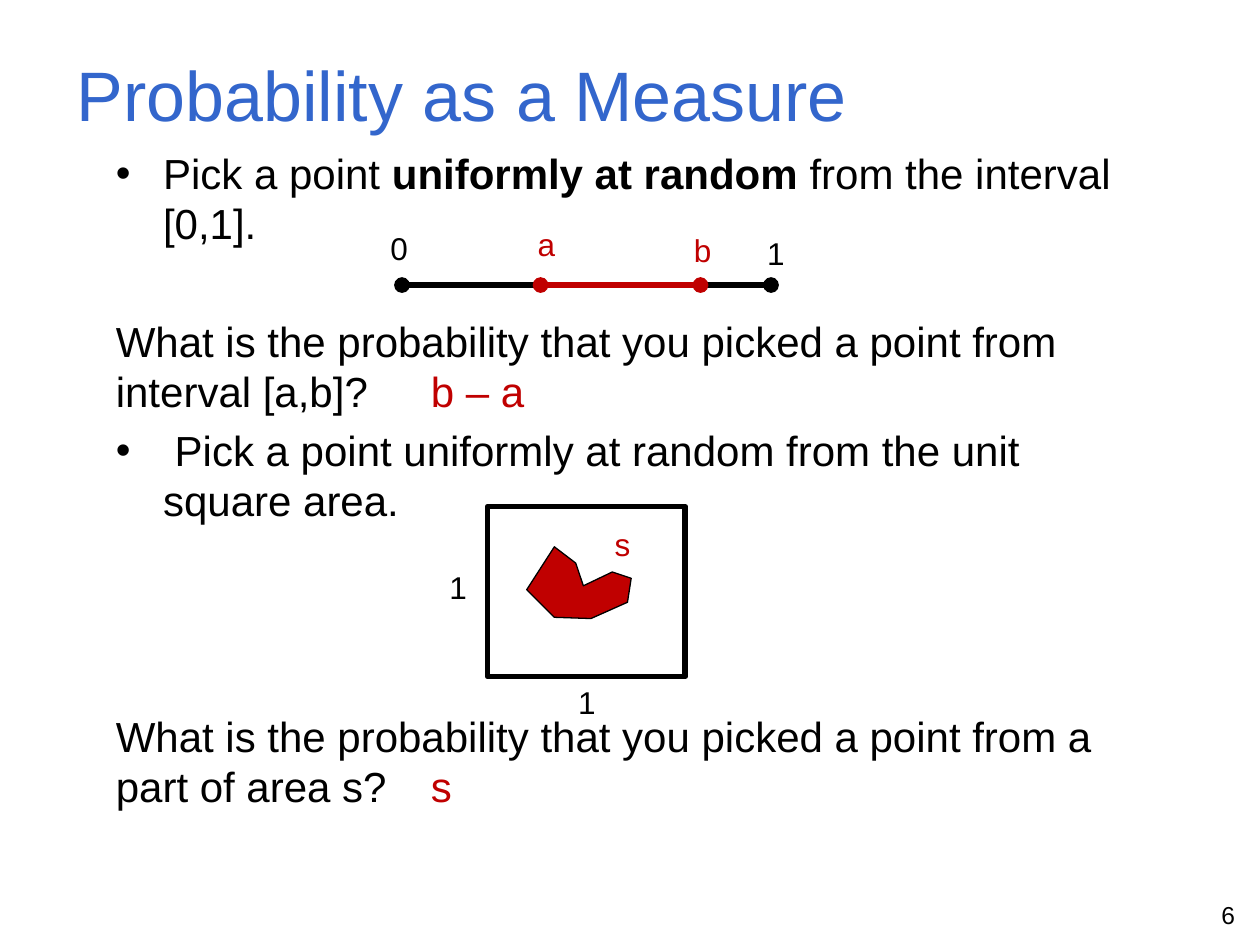
from dataclasses import dataclass
from typing import NamedTuple

from lxml import etree
from pptx import Presentation
from pptx import util as u
from pptx.dml.color import RGBColor
from pptx.enum import shapes, text
from pptx.oxml import ns

Pt = u.Pt


@dataclass(frozen=True)
class Theme:
    font: str = "Arial"
    title_color: str = "3366CC"
    ink: str = "000000"
    accent: str = "C00000"
    paper: str = "FFFFFF"
    title_size: float = 40
    body_size: float = 24
    label_size: float = 18
    number_size: float = 14
    line_height: float = 28.8
    bullet_indent: float = 27


THEME = Theme()


class Frame(NamedTuple):
    left: float
    top: float
    width: float
    height: float


class Span(NamedTuple):
    words: str
    color: str = THEME.ink
    bold: bool = False


class Item(NamedTuple):
    spans: tuple
    gap: float = 4.8
    bullet: bool = False
    answer_stop: float = 0


class Label(NamedTuple):
    words: str
    left: float
    top: float
    color: str = THEME.ink


class Segment(NamedTuple):
    start: float
    end: float
    color: str


ITEMS = (
    Item((Span("Pick a point "), Span("uniformly at random", bold=True),
          Span(" from the interval [0,1].")), bullet=True),
    Item((Span("What is the probability that you picked a point from interval [a,b]?\t"),
          Span("b – a", THEME.accent)), gap=38.4, answer_stop=171),
    Item((Span(" Pick a point uniformly at random from the unit square area."),),
         bullet=True),
    Item((Span("What is the probability that you picked a point from a part of area s?\t"),
          Span("s", THEME.accent)), gap=105.6, answer_stop=181),
)
INTERVAL_Y = 162.9
SEGMENTS = (Segment(229.7, 440.6, THEME.ink), Segment(308.9, 400.3, THEME.accent))
INTERVAL_LABELS = (
    Label("0", 216, 127.4), Label("1", 431.3, 130.3),
    Label("a", 300.2, 125.3, THEME.accent), Label("b", 389.5, 128.2, THEME.accent),
)
UNIT_SQUARE = Frame(278.6, 289.4, 113, 97.2)
SQUARE_LABELS = (
    Label("1", 249.8, 321.1), Label("1", 323.3, 386.6),
    Label("s", 344.2, 296.6, THEME.accent),
)
REGION = ((316.8, 312.5), (301, 337), (316.8, 352.8), (337.7, 353.5), (358.6, 344.2),
          (360.7, 330.5), (349.9, 326.9), (333.4, 334.8), (329, 321.8))


def rgb(color: str) -> RGBColor:
    return RGBColor.from_string(color)


def place(shape, frame: Frame) -> None:
    shape.left, shape.top, shape.width, shape.height = map(Pt, frame)


def add_span(para, span: Span, size: float) -> None:
    run = para.add_run()
    run.text = span.words
    run.font.name = THEME.font
    run.font.size = Pt(size)
    run.font.bold = span.bold
    run.font.color.rgb = rgb(span.color)


def add_text(page, frame: Frame, span: Span, size: float,
             align=text.PP_ALIGN.LEFT) -> None:
    box = page.shapes.add_textbox(*map(Pt, frame))
    box.text_frame.word_wrap = True
    para = box.text_frame.paragraphs[0]
    para.alignment = align
    add_span(para, span, size)


def add_label(page, label: Label) -> None:
    add_text(page, Frame(label.left, label.top, 19.4, 29),
             Span(label.words, label.color), THEME.label_size)


def set_title(page) -> None:
    title = page.shapes.title
    place(title, Frame(36.7, 8.6, 648, 90))
    title.text_frame.vertical_anchor = text.MSO_ANCHOR.MIDDLE
    title.text_frame.auto_size = text.MSO_AUTO_SIZE.NONE
    para = title.text_frame.paragraphs[0]
    para.alignment = text.PP_ALIGN.LEFT
    add_span(para, Span("Probability as a Measure", THEME.title_color), THEME.title_size)


def format_item(para, item: Item) -> None:
    para.alignment = text.PP_ALIGN.LEFT
    para.line_spacing = Pt(THEME.line_height)
    para.space_before = Pt(item.gap)
    # Bullets, indents and tab stops need XML
    props = para._p.get_or_add_pPr()
    indent = Pt(THEME.bullet_indent) if item.bullet else 0
    props.set("marL", str(indent))
    props.set("indent", str(-indent))
    if item.bullet:
        etree.SubElement(props, ns.qn("a:buChar"), char="•")
    else:
        etree.SubElement(props, ns.qn("a:buNone"))
    if item.answer_stop:
        stops = etree.SubElement(props, ns.qn("a:tabLst"))
        etree.SubElement(stops, ns.qn("a:tab"), pos=str(Pt(item.answer_stop)), algn="l")


def set_body(page) -> None:
    body = page.placeholders[1]
    place(body, Frame(59, 80.6, 599, 416.2))
    frame = body.text_frame
    frame.auto_size = text.MSO_AUTO_SIZE.NONE
    frame.vertical_anchor = text.MSO_ANCHOR.TOP
    for index, item in enumerate(ITEMS):
        para = frame.add_paragraph() if index else frame.paragraphs[0]
        format_item(para, item)
        for span in item.spans:
            add_span(para, span, THEME.body_size)


def add_segment(page, segment: Segment) -> None:
    line = page.shapes.add_connector(
        shapes.MSO_CONNECTOR.STRAIGHT, Pt(segment.start), Pt(INTERVAL_Y),
        Pt(segment.end), Pt(INTERVAL_Y))
    line.line.color.rgb = rgb(segment.color)
    line.line.width = Pt(3)
    outline = line.line._get_or_add_ln()
    for end in ("a:headEnd", "a:tailEnd"):
        etree.SubElement(outline, ns.qn(end), type="oval")
    etree.SubElement(line._element.spPr, ns.qn("a:effectLst"))


def paint(shape, fill: str, weight: float) -> None:
    shape.shadow.inherit = False
    shape.fill.solid()
    shape.fill.fore_color.rgb = rgb(fill)
    shape.line.color.rgb = rgb(THEME.ink)
    shape.line.width = Pt(weight)


def add_square(page) -> None:
    square = page.shapes.add_shape(shapes.MSO_SHAPE.RECTANGLE, *map(Pt, UNIT_SQUARE))
    paint(square, THEME.paper, 3.25)
    first, *rest = [(Pt(x), Pt(y)) for x, y in REGION]
    builder = page.shapes.build_freeform(*first)
    builder.add_line_segments(rest, close=True)
    paint(builder.convert_to_shape(), THEME.accent, 0.75)


def main() -> None:
    deck = Presentation()
    deck.slide_width, deck.slide_height = Pt(720), Pt(540)
    page = deck.slides.add_slide(deck.slide_layouts[1])
    set_title(page)
    set_body(page)
    # Unit interval with the part from a to b
    for segment in SEGMENTS:
        add_segment(page, segment)
    # Unit square with the region s
    add_square(page)
    for label in INTERVAL_LABELS + SQUARE_LABELS:
        add_label(page, label)
    # Page number
    add_text(page, Frame(545, 510.5, 167.8, 22.3), Span("6"), THEME.number_size,
             text.PP_ALIGN.RIGHT)
    deck.save("out.pptx")


if __name__ == "__main__":
    main()
